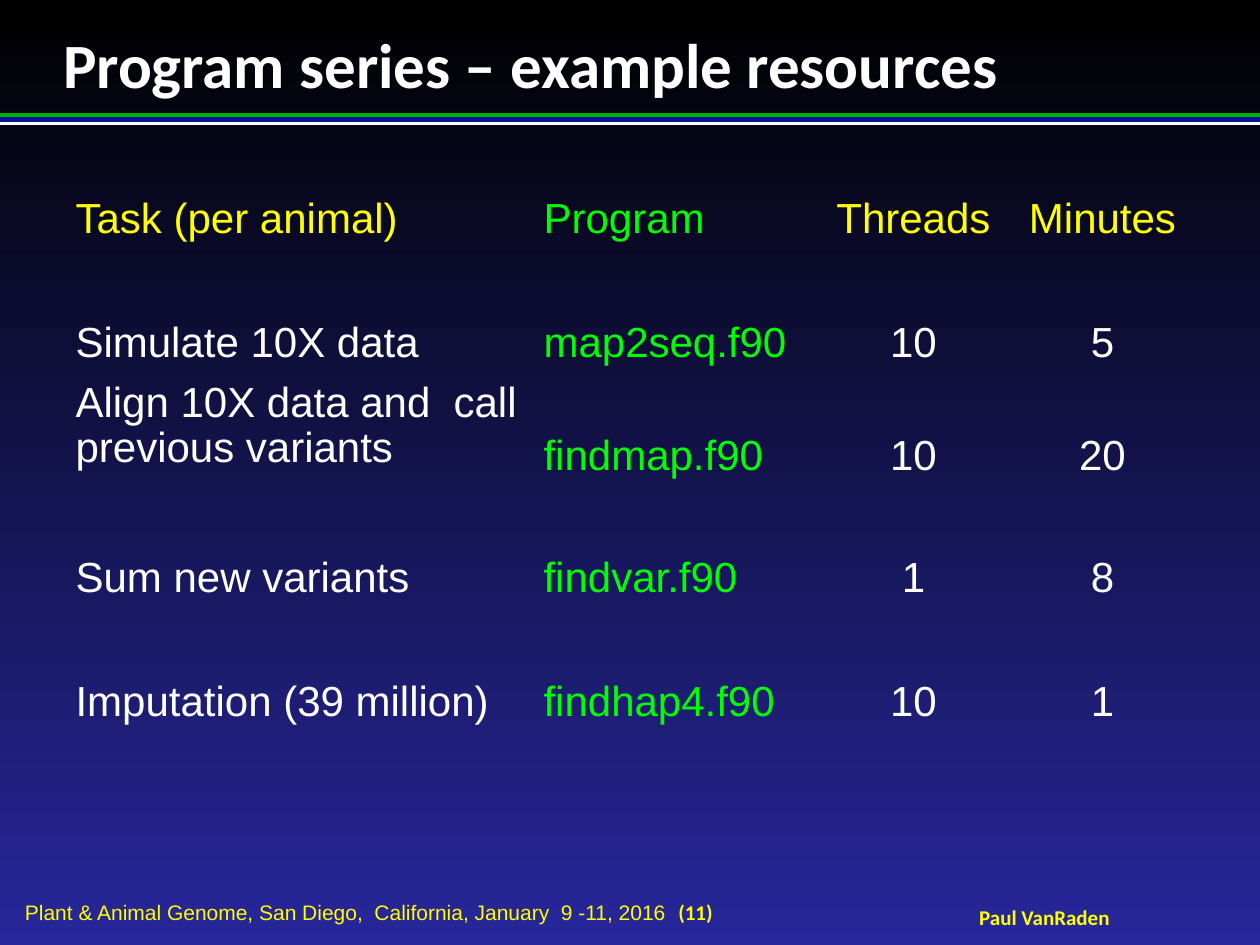
"""Build the slide listing example resources for a series of genomics programs."""
from dataclasses import dataclass

import pptx
import pptx.dml.color
import pptx.enum.shapes
import pptx.enum.text
import pptx.oxml.ns
import pptx.util

RGBColor = pptx.dml.color.RGBColor
Align = pptx.enum.text.PP_ALIGN
Anchor = pptx.enum.text.MSO_ANCHOR

BLACK = RGBColor(0x00, 0x00, 0x00)
NAVY = RGBColor(0x27, 0x27, 0x9B)
WHITE = RGBColor(0xFF, 0xFF, 0xFF)
YELLOW = RGBColor(0xFF, 0xFF, 0x00)
LIME = RGBColor(0x00, 0xFF, 0x00)
BAR_GREEN = RGBColor(0x01, 0xAF, 0x00)
BAR_BLUE = RGBColor(0x00, 0x17, 0x99)

PIXELS_PER_INCH = 126
NO_STYLE = "{2D5ABB26-0587-4C30-8999-92F81FD0307C}"


@dataclass(frozen=True)
class Box:
    left: int
    top: int
    width: int
    height: int


@dataclass(frozen=True)
class Run:
    text: str
    size: int
    color: RGBColor
    font: str = "Arial"
    bold: bool = False


@dataclass(frozen=True)
class Bar:
    top: int
    height: int
    color: RGBColor


@dataclass(frozen=True)
class Row:
    height: int
    values: tuple[str, ...] = ()
    color: RGBColor = WHITE
    two_lines: bool = False


BARS = (Bar(113, 4, BAR_GREEN), Bar(121, 4, WHITE), Bar(117, 5, BAR_BLUE))
COLUMN_WIDTHS = (468, 288, 189, 189)
PROGRAM_COLUMN = 1
ROWS = (
    Row(62, ("Task (per animal)", "Program", "Threads", "Minutes"), YELLOW),
    Row(61),
    Row(62, ("Simulate 10X data", "map2seq.f90", "10", "5")),
    Row(111, ("Align 10X data and  call previous variants", "findmap.f90", "10", "20"),
        two_lines=True),
    Row(61),
    Row(62, ("Sum new variants", "findvar.f90", "1", "8")),
    Row(61),
    Row(62, ("Imputation (39 million)", "findhap4.f90", "10", "1")),
)


def px(length: int) -> pptx.util.Emu:
    """Convert pixels to EMU."""
    return pptx.util.Emu(round(length * 914400 / PIXELS_PER_INCH))


def place(box: Box) -> tuple[pptx.util.Emu, ...]:
    """Return the position and size of a box in EMU."""
    return px(box.left), px(box.top), px(box.width), px(box.height)


def add_runs(paragraph, runs: tuple[Run, ...], alignment: Align = Align.LEFT) -> None:
    """Write formatted runs into a paragraph."""
    paragraph.alignment = alignment
    for item in runs:
        run = paragraph.add_run()
        run.text = item.text
        run.font.size = pptx.util.Pt(item.size)
        run.font.name = item.font
        run.font.bold = item.bold
        run.font.color.rgb = item.color


def fill_frame(shape, runs: tuple[Run, ...], alignment: Align = Align.LEFT,
               wrap: bool = True) -> None:
    """Write runs into a shape whose text frame has no margins."""
    frame = shape.text_frame
    frame.margin_left = frame.margin_right = 0
    frame.margin_top = frame.margin_bottom = 0
    frame.vertical_anchor = Anchor.MIDDLE
    frame.word_wrap = wrap
    frame.auto_size = pptx.enum.text.MSO_AUTO_SIZE.SHAPE_TO_FIT_TEXT
    add_runs(frame.paragraphs[0], runs, alignment)


def paint_background(slide) -> None:
    """Fill the background with a vertical gradient."""
    fill = slide.background.fill
    fill.gradient()
    fill.gradient_angle = 270
    for stop, position, color in zip(fill.gradient_stops, (0, 1), (BLACK, NAVY)):
        stop.position = position
        stop.color.rgb = color


def add_bar(slide, bar: Bar) -> None:
    """Draw one full-width stripe under the title."""
    shape = slide.shapes.add_shape(pptx.enum.shapes.MSO_SHAPE.RECTANGLE,
                                   *place(Box(0, bar.top, 1260, bar.height)))
    shape.shadow.inherit = False
    shape.fill.solid()
    shape.fill.fore_color.rgb = bar.color
    shape.line.fill.background()


def fill_cell(cell, text: str, column: int, row: Row) -> None:
    """Write one value in the style of its column and row."""
    color = LIME if column == PROGRAM_COLUMN else row.color
    alignment = Align.CENTER if column > PROGRAM_COLUMN else Align.LEFT
    paragraph = cell.text_frame.paragraphs[0]
    add_runs(paragraph, (Run(text, 24, color),), alignment)
    if row.two_lines and column == 0:
        paragraph.line_spacing = 0.95
    elif row.two_lines:
        cell.vertical_anchor = Anchor.BOTTOM
        cell.margin_bottom = px(8)


def add_resource_table(slide, box: Box) -> None:
    """Add the table of tasks, programs, threads and minutes."""
    table = slide.shapes.add_table(len(ROWS), len(COLUMN_WIDTHS), *place(box)).table
    table.first_row = table.horz_banding = False
    properties = table._tbl.tblPr
    properties.find(pptx.oxml.ns.qn("a:tableStyleId")).text = NO_STYLE
    for column, width in zip(table.columns, COLUMN_WIDTHS):
        column.width = px(width)
    for table_row, row in zip(table.rows, ROWS):
        table_row.height = px(row.height)
        for cell in table_row.cells:
            cell.fill.background()
        for column, text in enumerate(row.values):
            fill_cell(table_row.cells[column], text, column, row)


def main() -> None:
    """Build and save the presentation."""
    presentation = pptx.Presentation()
    presentation.slide_width, presentation.slide_height = px(1260), px(945)
    slide = presentation.slides.add_slide(presentation.slide_layouts[5])
    paint_background(slide)

    title = slide.shapes.title
    title.left, title.top, title.width, title.height = place(Box(63, 25, 1134, 76))
    fill_frame(title, (Run("Program series – example resources", 36, WHITE, "Calibri", True),))

    for bar in BARS:
        add_bar(slide, bar)

    author = slide.shapes.add_textbox(*place(Box(969, 905, 151, 25)))
    fill_frame(author, (Run("Paul VanRaden", 12, YELLOW, "Calibri", True),),
               Align.CENTER, wrap=False)
    venue = slide.shapes.add_textbox(*place(Box(25, 900, 857, 25)))
    fill_frame(venue, (
        Run("Plant & Animal Genome, San Diego,  California, January  9 -11, 2016  ", 12, YELLOW),
        Run("(11)", 12, YELLOW, "Calibri", True),
    ))

    add_resource_table(slide, Box(63, 189, 1134, sum(row.height for row in ROWS)))
    presentation.save("out.pptx")


if __name__ == "__main__":
    main()
